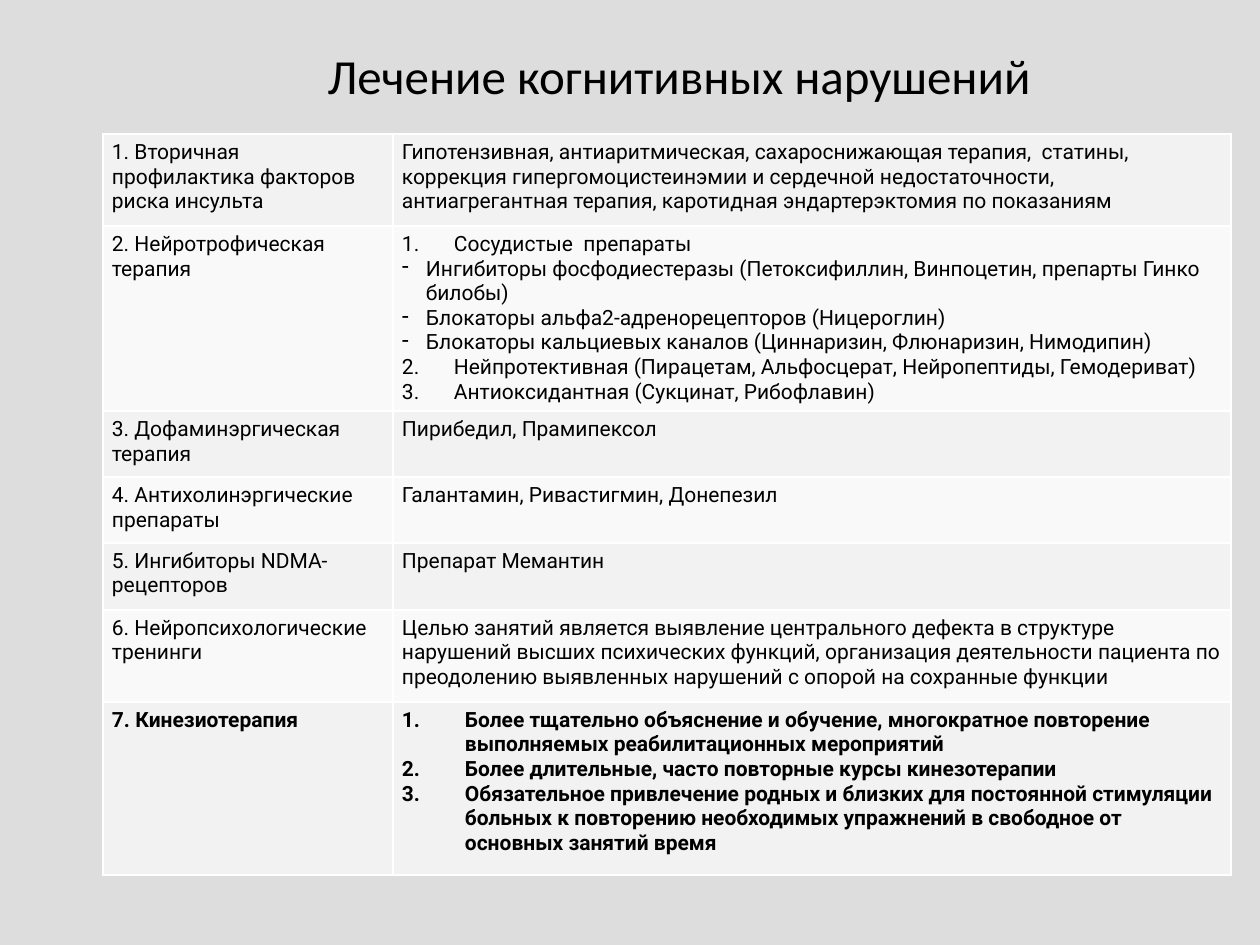
from lxml.etree import SubElement
from pptx import Presentation
from pptx.dml.color import RGBColor
from pptx.enum.text import MSO_ANCHOR, PP_ALIGN
from pptx.oxml.ns import qn
from pptx.util import Pt

PX_PER_INCH = 126
BACKGROUND = RGBColor(0xDD, 0xDD, 0xDD)
BLACK = RGBColor(0, 0, 0)
WHITE = RGBColor(0xFF, 0xFF, 0xFF)
BANDS = (RGBColor(0xF2, 0xF2, 0xF2), RGBColor(0xF9, 0xF9, 0xF9))

COLUMN_WIDTHS = (290, 838)
ROW_HEIGHTS = (92, 185, 66, 66, 67, 92, 173)

VASCULAR = dict(number=1, indent=52)
DASH = dict(dash=True, indent=24)
FURTHER = dict(number=2, indent=52)
EXERCISE = dict(number=1, indent=63)

# Each row: therapy, then its details as (text, list format)
THERAPIES = [
    ("1. Вторичная профилактика факторов риска инсульта", [
        ("Гипотензивная, антиаритмическая, сахароснижающая терапия,  статины, "
         "коррекция гипергомоцистеинэмии и сердечной недостаточности, "
         "антиагрегантная терапия, каротидная эндартерэктомия по показаниям", {})]),
    ("2. Нейротрофическая терапия", [
        ("Сосудистые  препараты", VASCULAR),
        ("Ингибиторы фосфодиестеразы (Петоксифиллин, Винпоцетин, "
         "препарты Гинко билобы)", DASH),
        ("Блокаторы альфа2-адренорецепторов (Ницероглин)", DASH),
        ("Блокаторы кальциевых каналов (Циннаризин, Флюнаризин, Нимодипин)", DASH),
        ("Нейпротективная (Пирацетам, Альфосцерат, Нейропептиды, Гемодериват)", FURTHER),
        ("Антиоксидантная (Сукцинат, Рибофлавин)", FURTHER)]),
    ("3. Дофаминэргическая терапия", [("Пирибедил, Прамипексол", {})]),
    ("4. Антихолинэргические препараты", [("Галантамин, Ривастигмин, Донепезил", {})]),
    ("5. Ингибиторы NDMA-рецепторов", [("Препарат Мемантин", {})]),
    ("6. Нейропсихологические тренинги", [
        ("Целью занятий является выявление центрального дефекта в структуре "
         "нарушений высших психических функций, организация деятельности пациента "
         "по преодолению выявленных нарушений с опорой на сохранные функции", {})]),
    ("7. Кинезиотерапия", [
        ("Более тщательно объяснение и обучение, многократное повторение "
         "выполняемых реабилитационных мероприятий", EXERCISE),
        ("Более длительные, часто повторные курсы кинезотерапии", EXERCISE),
        ("Обязательное привлечение родных и близких для постоянной стимуляции "
         "больных к повторению необходимых упражнений в свободное от основных "
         "занятий время", EXERCISE)]),
]


def px(length):
    return round(length * 914400 / PX_PER_INCH)


def write(paragraph, text, font="Roboto", size=12, bold=False,
          align=PP_ALIGN.LEFT, indent=0, number=None, dash=False):
    paragraph.alignment = align
    run = paragraph.add_run()
    run.text = text
    run.font.name = font
    run.font.size = Pt(size)
    run.font.bold = bold
    run.font.color.rgb = BLACK
    if indent:
        properties = paragraph._p.get_or_add_pPr()
        properties.set("marL", str(px(indent)))
        properties.set("indent", str(-px(indent)))
        if dash:
            SubElement(properties, qn("a:buChar"), char="-")
        else:
            SubElement(properties, qn("a:buAutoNum"), type="arabicPeriod",
                       startAt=str(number))


def add_borders(cell):
    properties = cell._tc.get_or_add_tcPr()
    for position, side in enumerate(("lnL", "lnR", "lnT", "lnB")):
        line = SubElement(properties, qn(f"a:{side}"), w=str(Pt(1)))
        fill = SubElement(line, qn("a:solidFill"))
        SubElement(fill, qn("a:srgbClr"), val=str(WHITE))
        properties.insert(position, line)  # borders precede the fill


def fill_cell(cell, details, band, bold):
    cell.fill.solid()
    cell.fill.fore_color.rgb = band
    cell.vertical_anchor = MSO_ANCHOR.TOP
    cell.margin_left = cell.margin_right = px(9)
    cell.margin_top = cell.margin_bottom = px(6)
    add_borders(cell)
    frame = cell.text_frame
    for index, (text, style) in enumerate(details):
        paragraph = frame.add_paragraph() if index else frame.paragraphs[0]
        write(paragraph, text, bold=bold, **style)


def place_title(slide, left, top, width, height):
    title = slide.shapes.title
    title.left, title.top = px(left), px(top)
    title.width, title.height = px(width), px(height)
    title.text_frame.vertical_anchor = MSO_ANCHOR.MIDDLE
    write(title.text_frame.paragraphs[0], "Лечение когнитивных нарушений ",
          font="Calibri", size=28, align=PP_ALIGN.CENTER)


def add_therapy_table(slide, left, top):
    table = slide.shapes.add_table(
        len(THERAPIES), len(COLUMN_WIDTHS), px(left), px(top),
        px(sum(COLUMN_WIDTHS)), px(sum(ROW_HEIGHTS))).table
    table.first_row = table.horz_banding = False
    for column, width in zip(table.columns, COLUMN_WIDTHS):
        column.width = px(width)
    for index, (therapy, details) in enumerate(THERAPIES):
        row = table.rows[index]
        row.height = px(ROW_HEIGHTS[index])
        band = BANDS[index % 2]
        bold = index == len(THERAPIES) - 1
        fill_cell(row.cells[0], [(therapy, {})], band, bold)
        fill_cell(row.cells[1], details, band, bold)


def main():
    deck = Presentation()
    deck.slide_width, deck.slide_height = px(1260), px(945)
    slide = deck.slides.add_slide(deck.slide_layouts[5])
    slide.background.fill.solid()
    slide.background.fill.fore_color.rgb = BACKGROUND
    place_title(slide, 217, -39, 935, 227)
    add_therapy_table(slide, 103, 134)
    deck.save("out.pptx")


if __name__ == "__main__":
    main()
